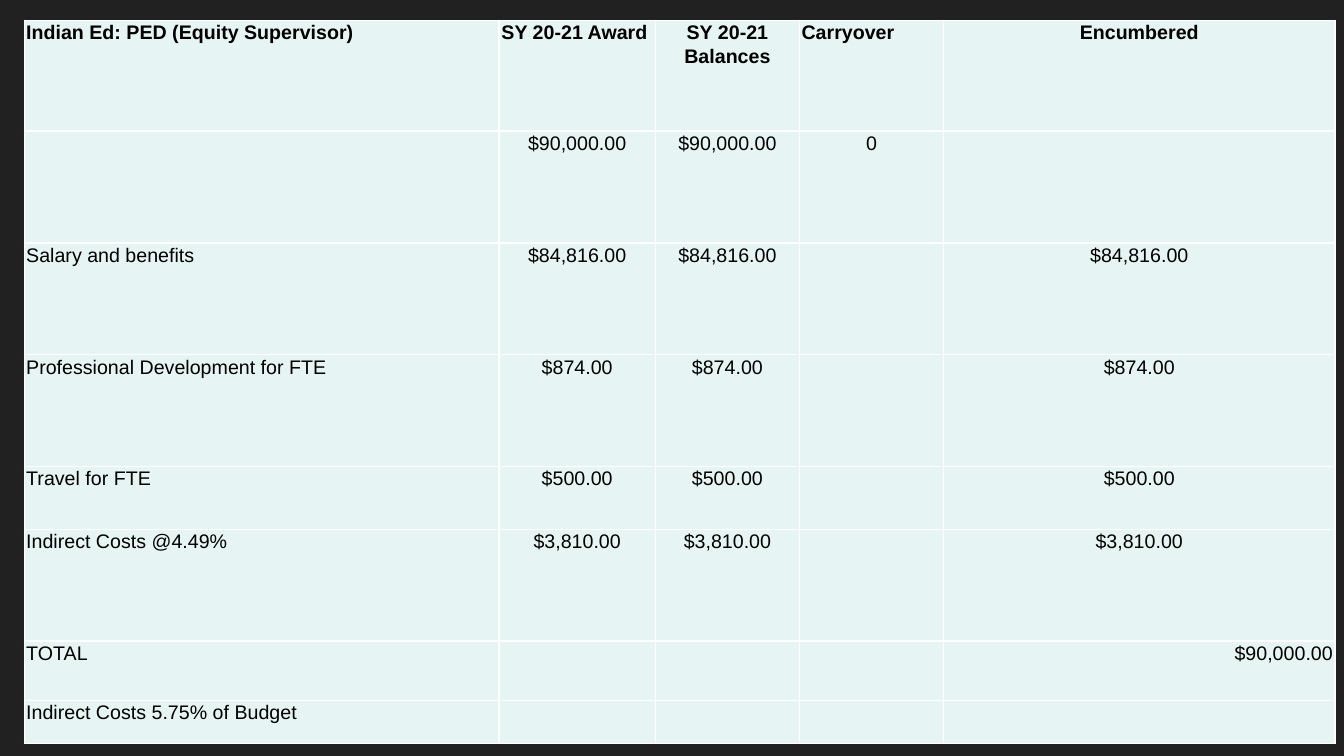
import dataclasses

import pptx
import pptx.dml.color
import pptx.enum.text
import pptx.oxml
import pptx.oxml.ns
import pptx.table
import pptx.util

Inches = pptx.util.Inches
Align = pptx.enum.text.PP_ALIGN
COLORS = {"background": "212121", "cell": "E6F5F3", "border": "FFFFFF", "text": "000000"}
MARGINS = {
    "margin_left": Inches(0.02),
    "margin_right": Inches(0.02),
    "margin_top": 0,
    "margin_bottom": 0,
}
FONT = {"name": "Arial", "size": pptx.util.Pt(14)}
COLUMN_WIDTHS = (4.71, 1.55, 1.43, 1.43, 3.88)


@dataclasses.dataclass(frozen=True)
class BudgetRow:
    height: float
    label: str = ""
    award: str = ""
    balance: str = ""
    carryover: str = ""
    encumbered: str = ""
    header: bool = False
    encumbered_align: Align = Align.CENTER

    def entries(self) -> list[tuple[str, Align]]:
        carryover_align = Align.LEFT if self.header else Align.CENTER
        return [
            (self.label, Align.LEFT),
            (self.award, Align.CENTER),
            (self.balance, Align.CENTER),
            (self.carryover, carryover_align),
            (self.encumbered, self.encumbered_align),
        ]


BUDGET_ROWS = [
    BudgetRow(1.1, "Indian Ed: PED (Equity Supervisor)", "SY 20-21 Award ",
              "SY 20-21 Balances", "Carryover", "Encumbered", header=True),
    BudgetRow(1.11, "", "$90,000.00", "$90,000.00", "0"),
    BudgetRow(1.11, "Salary and benefits", "$84,816.00", "$84,816.00", "", "$84,816.00"),
    BudgetRow(1.11, "Professional Development for FTE", "$874.00", "$874.00", "", "$874.00"),
    BudgetRow(0.62, "Travel for FTE", "$500.00", "$500.00", "", "$500.00"),
    BudgetRow(1.11, "Indirect Costs @4.49%", "$3,810.00", "$3,810.00", "", "$3,810.00"),
    BudgetRow(0.59, "TOTAL", encumbered="$90,000.00", encumbered_align=Align.RIGHT),
    BudgetRow(0.43, "Indirect Costs 5.75% of Budget"),
]


def rgb(name: str) -> pptx.dml.color.RGBColor:
    return pptx.dml.color.RGBColor.from_string(COLORS[name])


def apply_format(target: object, values: dict) -> None:
    for attribute, value in values.items():
        setattr(target, attribute, value)


def add_borders(cell: pptx.table._Cell) -> None:
    properties = cell._tc.get_or_add_tcPr()
    for position, side in enumerate(("lnL", "lnR", "lnT", "lnB")):
        border = pptx.oxml.parse_xml(
            f'<a:{side} {pptx.oxml.ns.nsdecls("a")} w="12700"><a:solidFill>'
            f'<a:srgbClr val="{COLORS["border"]}"/></a:solidFill></a:{side}>'
        )
        properties.insert(position, border)


def draw_cell(cell: pptx.table._Cell, text: str, align: Align, bold: bool) -> None:
    apply_format(cell, MARGINS)
    cell.fill.solid()
    cell.fill.fore_color.rgb = rgb("cell")
    add_borders(cell)
    paragraph = cell.text_frame.paragraphs[0]
    apply_format(paragraph, {"alignment": align, "line_spacing": 1.07})
    if text:
        run = paragraph.add_run()
        run.text = text
        apply_format(run.font, FONT | {"bold": bold})
        run.font.color.rgb = rgb("text")


def main() -> None:
    presentation = pptx.Presentation()
    apply_format(presentation, {"slide_width": Inches(13.33), "slide_height": Inches(7.5)})
    slide = presentation.slides.add_slide(presentation.slide_layouts[6])
    slide.background.fill.solid()
    slide.background.fill.fore_color.rgb = rgb("background")

    # Budget table
    table = slide.shapes.add_table(
        len(BUDGET_ROWS), len(COLUMN_WIDTHS), Inches(0.24), Inches(0.2),
        Inches(sum(COLUMN_WIDTHS)), Inches(sum(row.height for row in BUDGET_ROWS)),
    ).table
    for column, width in zip(table.columns, COLUMN_WIDTHS):
        column.width = Inches(width)

    # Budget lines
    for row_index, budget_row in enumerate(BUDGET_ROWS):
        table.rows[row_index].height = Inches(budget_row.height)
        for column_index, (text, align) in enumerate(budget_row.entries()):
            draw_cell(table.cell(row_index, column_index), text, align, budget_row.header)

    presentation.save("out.pptx")


if __name__ == "__main__":
    main()
